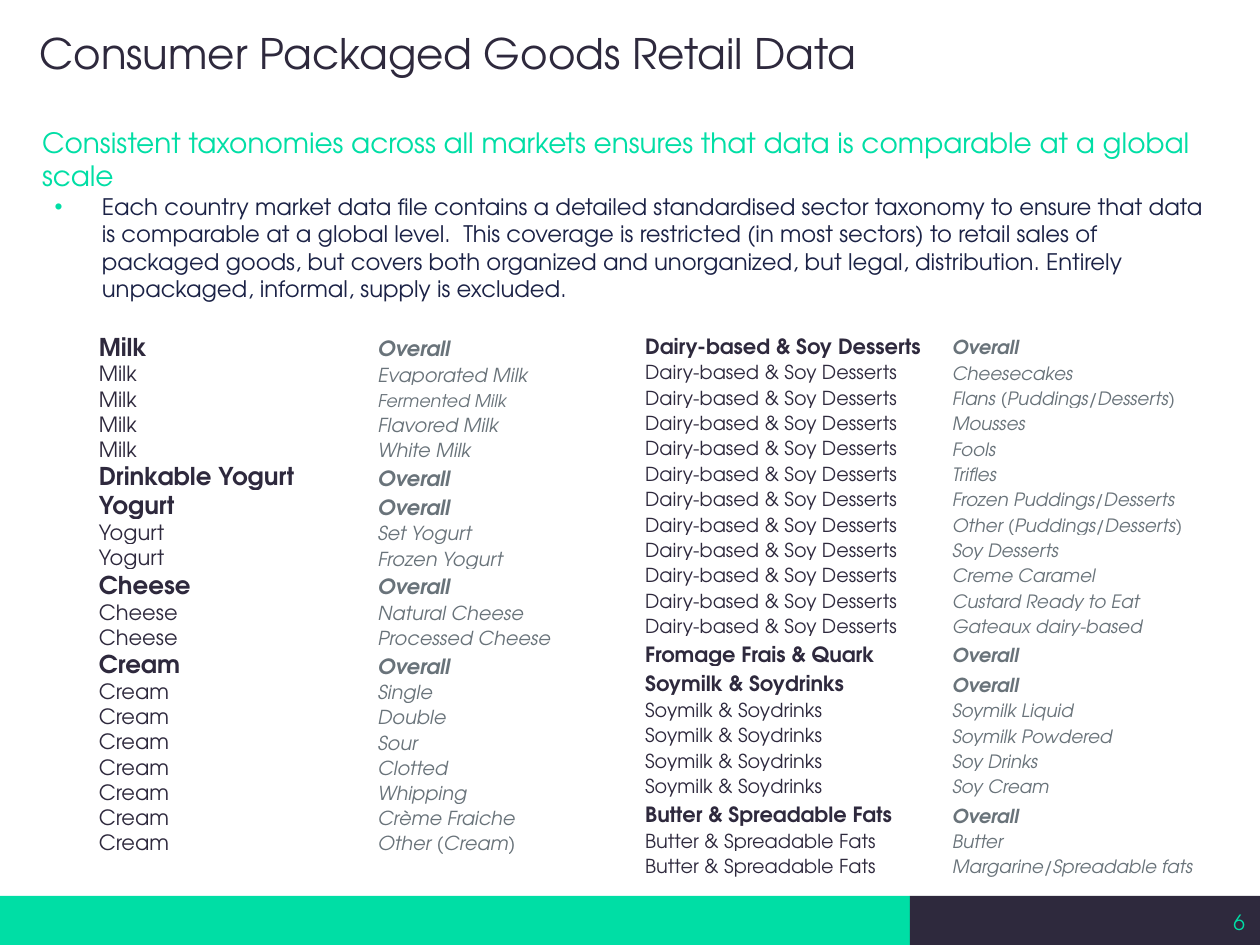
from pptx import Presentation
from pptx.dml.color import RGBColor
from pptx.enum.shapes import MSO_SHAPE
from pptx.enum.text import MSO_ANCHOR as ANCHOR, MSO_AUTO_SIZE as AUTOSIZE, PP_ALIGN as ALIGN
from pptx.oxml import parse_xml
from pptx.oxml.ns import nsdecls
from pptx.util import Pt

FONT = "TeX Gyre Adventor"
GREEN, DARK, NAVY, GREY = "00DEA5", "2E293D", "1B2246", "69737A"

DAIRY = [
    ("Milk", ["Evaporated Milk", "Fermented Milk", "Flavored Milk", "White Milk"]),
    ("Drinkable Yogurt", []),
    ("Yogurt", ["Set Yogurt", "Frozen Yogurt"]),
    ("Cheese", ["Natural Cheese", "Processed Cheese"]),
    ("Cream", ["Single", "Double", "Sour", "Clotted", "Whipping",
               "Crème Fraiche", "Other (Cream)"]),
]
DESSERTS = [
    ("Dairy-based & Soy Desserts",
     ["Cheesecakes", "Flans (Puddings/Desserts)", "Mousses", "Fools", "Trifles",
      "Frozen Puddings/Desserts", "Other (Puddings/Desserts)", "Soy Desserts",
      "Creme Caramel", "Custard Ready to Eat", "Gateaux dairy-based"]),
    ("Fromage Frais & Quark", []),
    ("Soymilk & Soydrinks", ["Soymilk Liquid", "Soymilk Powdered", "Soy Drinks", "Soy Cream"]),
    ("Butter & Spreadable Fats", ["Butter", "Margarine/Spreadable fats"]),
]


def rgb(hex_color):
    return RGBColor.from_string(hex_color)


def write(tf, text, size=12, color=DARK, bold=False, italic=False, align=ALIGN.LEFT):
    p = tf.paragraphs[0]
    p.alignment = align
    p.space_before = Pt(0)
    r = p.add_run()
    r.text = text
    r.font.name = FONT
    r.font.size = Pt(size)
    r.font.bold = bold
    r.font.italic = italic
    r.font.color.rgb = rgb(color)
    return p


def set_bullet(p, char=None, color=GREEN, indent=0):
    """Give the paragraph a hanging bullet, or none without a char."""
    pPr = p._p.get_or_add_pPr()
    pPr.set("marL", str(Pt(indent)))
    pPr.set("indent", str(-Pt(indent)))
    if char:
        pPr.append(parse_xml(f'<a:buClr {nsdecls("a")}><a:srgbClr val="{color}"/></a:buClr>'))
        pPr.append(parse_xml(f'<a:buChar {nsdecls("a")} char="{char}"/>'))
    else:
        pPr.append(parse_xml(f'<a:buNone {nsdecls("a")}/>'))


class SlideBuilder:
    def __init__(self, prs, layout):
        self.s = prs.slides.add_slide(prs.slide_layouts[layout])

    def frame(self, sp, anchor, margins):
        tf = sp.text_frame
        tf.word_wrap = True
        tf.auto_size = AUTOSIZE.NONE
        tf.vertical_anchor = anchor
        (tf.margin_left, tf.margin_top,
         tf.margin_right, tf.margin_bottom) = map(Pt, margins)
        return tf

    def placeholder(self, idx, box, text, anchor=ANCHOR.TOP, margins=(0, 0, 0, 0), **fmt):
        sp = self.s.placeholders[idx]
        sp.left, sp.top, sp.width, sp.height = map(Pt, box)
        return write(self.frame(sp, anchor, margins), text, **fmt)

    def bar(self, box, color):
        sp = self.s.shapes.add_shape(MSO_SHAPE.RECTANGLE, *map(Pt, box))
        sp.shadow.inherit = False
        sp.fill.solid()
        sp.fill.fore_color.rgb = rgb(color)
        sp.line.fill.background()

    def text(self, box, text, **fmt):
        sp = self.s.shapes.add_textbox(*map(Pt, box))
        write(self.frame(sp, ANCHOR.MIDDLE, (0, 0, 0, 0)), text, **fmt)

    def taxonomy(self, left, top, widths, groups, heights, sizes, special=None):
        """Table with a bold row per group; heights and sizes are (group, item)."""
        rows = []
        for name, items in groups:
            rows.append((name, "Overall", True))
            rows += [(name, item, False) for item in items]
        total = sum(heights[0 if row[2] else 1] for row in rows)
        tbl = self.s.shapes.add_table(len(rows), 2, Pt(left), Pt(top),
                                      Pt(sum(widths)), Pt(total)).table
        tbl.first_row = tbl.horz_banding = False
        for col, width in zip(tbl.columns, widths):
            col.width = Pt(width)
        for i, (name, item, head) in enumerate(rows):
            kind = 0 if head else 1
            tbl.rows[i].height = Pt(heights[kind])
            name_size, item_size = sizes[kind]
            item_size = (special or {}).get(item, item_size)
            self.cell(tbl.cell(i, 0), name, size=name_size, bold=head)
            self.cell(tbl.cell(i, 1), item, size=item_size, bold=head, italic=True, color=GREY)

    def cell(self, cell, text, **fmt):
        cell.fill.background()
        cell.vertical_anchor = ANCHOR.BOTTOM
        cell.margin_left = cell.margin_top = cell.margin_right = Pt(0.7)
        cell.margin_bottom = 0
        write(cell.text_frame, text, **fmt)


def main():
    prs = Presentation()
    prs.slide_width, prs.slide_height = Pt(720), Pt(540)
    b = SlideBuilder(prs, layout=3)

    # Footer
    b.bar((0, 512, 520, 28), GREEN)
    b.bar((520, 512, 200, 28), DARK)
    b.text((549.5, 512.5, 162, 29), "6", color=GREEN, align=ALIGN.RIGHT)

    # Heading, key message and explanation
    p = b.placeholder(1, (0, 0, 720, 60), "Consumer Packaged Goods Retail Data",
                      anchor=ANCHOR.MIDDLE, margins=(22.5, 0, 0, 0), size=24)
    set_bullet(p)
    b.placeholder(0, (24, 71.5, 673, 46),
                  "Consistent taxonomies across all markets ensures that data is "
                  "comparable at a global scale", size=16, color=GREEN)
    p = b.placeholder(2, (24, 106.5, 674.5, 376),
                      "Each country market data file contains a detailed standardised sector "
                      "taxonomy to ensure that data is comparable at a global level.  This "
                      "coverage is restricted (in most sectors) to retail sales of packaged "
                      "goods, but covers both organized and unorganized, but legal, "
                      "distribution. Entirely unpackaged, informal, supply is excluded.",
                      margins=(7.2, 3.6, 7.2, 3.6), size=13, color=NAVY)
    set_bullet(p, "•", indent=27)

    # Taxonomy tables
    b.taxonomy(368, 188, (175.5, 148.5), DESSERTS, heights=(16.8, 14.5),
               sizes=((12, 11), (11, 10.5)))
    b.taxonomy(55.75, 189.5, (159.5, 134.5), DAIRY, heights=(16.6, 14.4),
               sizes=((14, 12), (12, 11)), special={"Fermented Milk": 10})

    prs.save("out.pptx")


if __name__ == "__main__":
    main()
